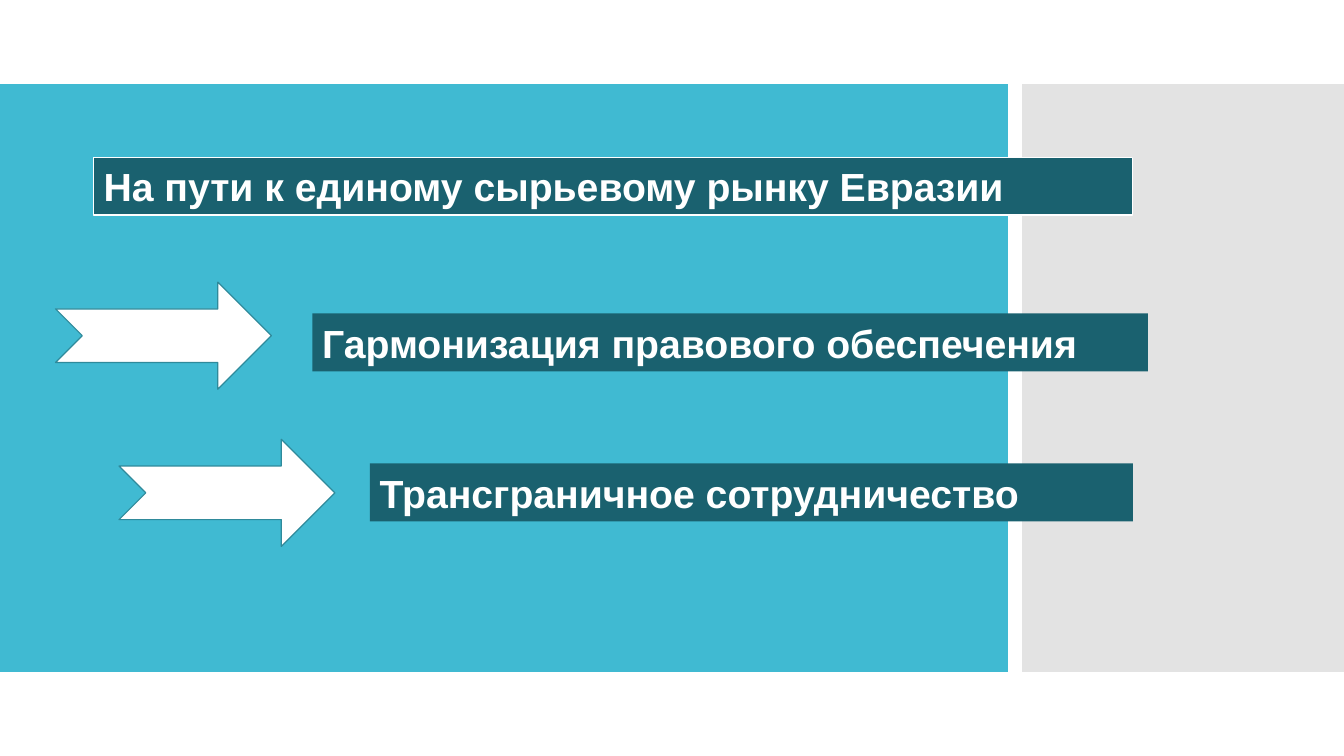
from dataclasses import dataclass

from lxml.etree import SubElement
from pptx import Presentation
from pptx.dml.color import RGBColor
from pptx.enum.shapes import MSO_SHAPE as Shape
from pptx.enum.text import MSO_ANCHOR as Anchor, PP_ALIGN as Align
from pptx.oxml.ns import qn
from pptx.util import Cm, Pt

# Lengths in centimetres: left, top, width
TITLE = ("На пути к единому сырьевому рынку Евразии", 2.36, 3.96, 26.19)
TOPICS = [
    {"bar": ("Гармонизация правового обеспечения", 7.87, 7.9, 21.06),
     "arrow": (1.4, 7.11)},
    {"bar": ("Трансграничное сотрудничество", 9.32, 11.68, 19.23),
     "arrow": (3.0, 11.07)},
]

SLIDE_W, SLIDE_H = 33.87, 19.05
BAND_TOP = 2.12
BAND_H = SLIDE_H - 2 * BAND_TOP
MAIN_W, GAP = 25.4, 0.36
BAR_H = 1.46
ARROW_W, ARROW_H = 5.44, 2.7


@dataclass(frozen=True)
class Theme:
    main: str = "40BAD2"
    side: str = "C8C8C8"
    side_opacity: int = 50
    bar: str = "1A616F"
    light: str = "FFFFFF"
    arrow_edge: str = "2F8A9B"
    font: str = "Arial"
    text_size: float = 28
    title_edge: float = 0.75
    arrow_edge_width: float = 0.85


THEME = Theme()


def add_block(slide, kind, left, top, width, height, fill,
              edge=None, edge_width=0, opacity=100):
    block = slide.shapes.add_shape(kind, Cm(left), Cm(top), Cm(width), Cm(height))
    block.shadow.inherit = False
    block.fill.solid()
    block.fill.fore_color.rgb = RGBColor.from_string(fill)
    if opacity < 100:
        color = block._element.spPr.find(qn("a:solidFill"))[0]
        SubElement(color, qn("a:alpha")).set("val", str(opacity * 1000))
    if edge:
        block.line.color.rgb = RGBColor.from_string(edge)
        block.line.width = Pt(edge_width)
    else:
        block.line.fill.background()
    return block


def write(block, text, *, size, color, font, bold=False, align=Align.LEFT):
    frame = block.text_frame
    frame.word_wrap = True
    frame.vertical_anchor = Anchor.MIDDLE
    paragraph = frame.paragraphs[0]
    paragraph.alignment = align
    run = paragraph.add_run()
    run.text = text
    run.font.size = Pt(size)
    run.font.name = font
    run.font.bold = bold
    run.font.color.rgb = RGBColor.from_string(color)


def add_bar(slide, text, left, top, width, **edge):
    bar = add_block(slide, Shape.RECTANGLE, left, top, width, BAR_H, THEME.bar, **edge)
    write(bar, text, size=THEME.text_size, color=THEME.light, font=THEME.font, bold=True)


def main():
    deck = Presentation()
    deck.slide_width, deck.slide_height = Cm(SLIDE_W), Cm(SLIDE_H)
    slide = deck.slides.add_slide(deck.slide_layouts[6])

    side_left = MAIN_W + GAP
    add_block(slide, Shape.RECTANGLE, 0, BAND_TOP, MAIN_W, BAND_H, THEME.main)
    add_block(slide, Shape.RECTANGLE, side_left, BAND_TOP, SLIDE_W - side_left, BAND_H,
              THEME.side, opacity=THEME.side_opacity)

    add_bar(slide, *TITLE, edge=THEME.light, edge_width=THEME.title_edge)
    for topic in TOPICS:
        add_bar(slide, *topic["bar"])
        add_block(slide, Shape.NOTCHED_RIGHT_ARROW, *topic["arrow"], ARROW_W, ARROW_H,
                  THEME.light, edge=THEME.arrow_edge, edge_width=THEME.arrow_edge_width)

    deck.save("out.pptx")


if __name__ == "__main__":
    main()
